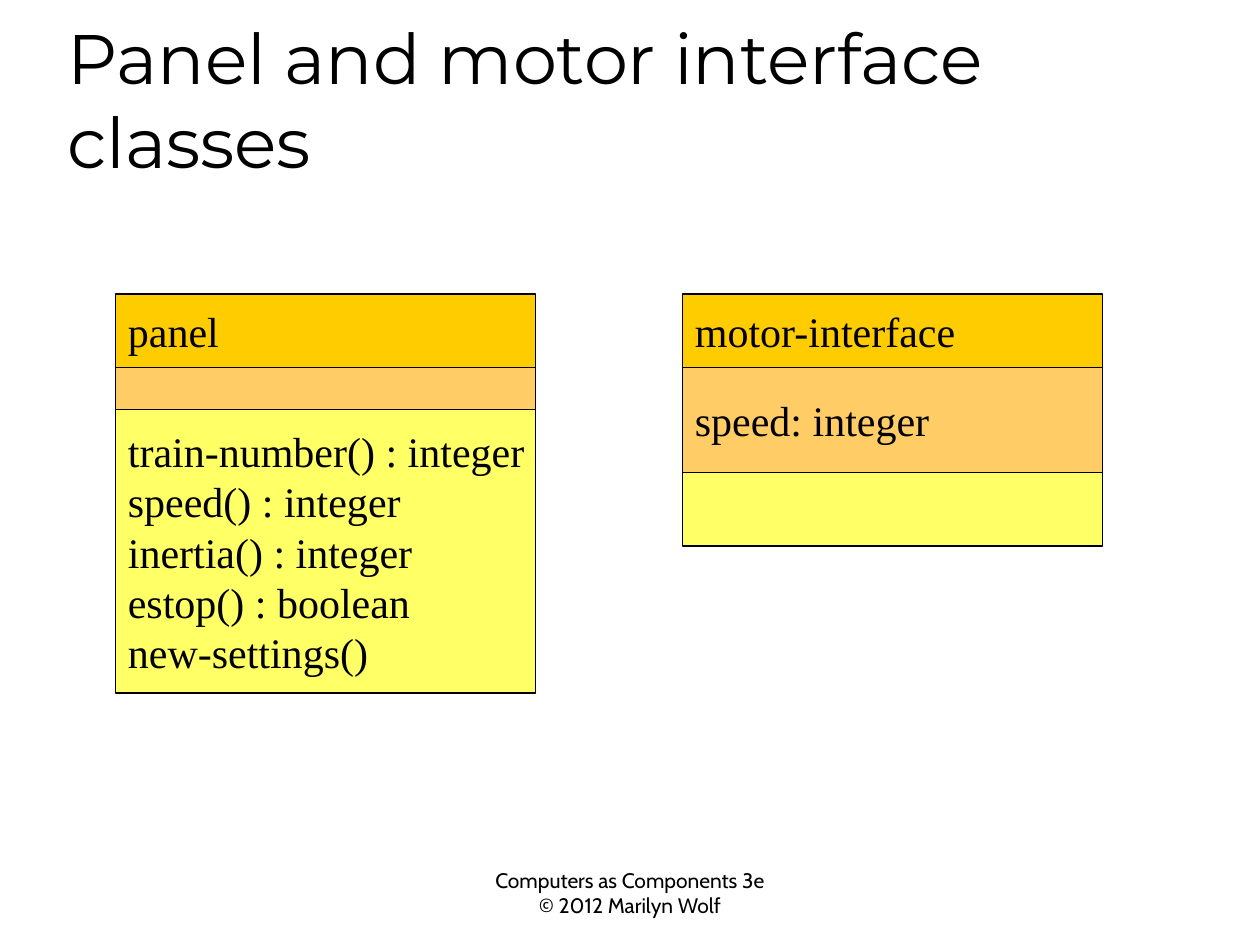
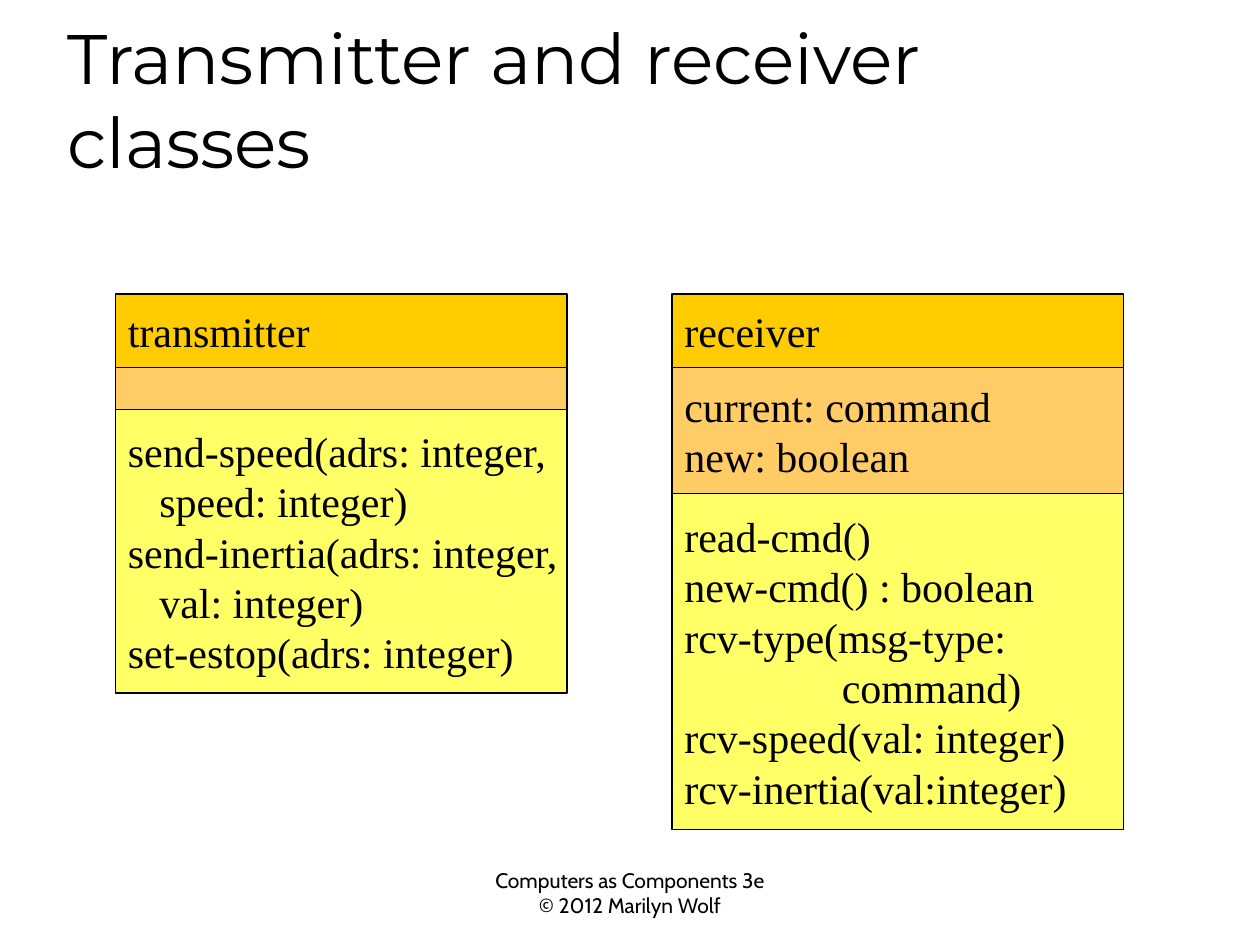
from pptx import Presentation
from pptx.dml.color import RGBColor
from pptx.enum.shapes import MSO_SHAPE
from pptx.enum.text import MSO_ANCHOR, PP_ALIGN
from pptx.util import Inches, Pt

BLACK = RGBColor(0x00, 0x00, 0x00)
NAME_FILL = RGBColor(0xFF, 0xCC, 0x00)
ATTRIBUTE_FILL = RGBColor(0xFF, 0xCC, 0x66)
OPERATION_FILL = RGBColor(0xFF, 0xFF, 0x66)
FILLS = (NAME_FILL, ATTRIBUTE_FILL, OPERATION_FILL)

UNIT = Inches(1) // 12  # one grid column or row
SLIDE_COLUMNS, SLIDE_ROWS = 120, 90
CLASS_TOP, NAME_ROWS = 28, 7

TITLE_FONT = {"name": "Montserrat", "size": Pt(40)}
CLASS_FONT = {"name": "Times New Roman", "size": Pt(24)}
FOOTER_FONT = {"name": "Cabin", "size": Pt(12)}
FOOTER_LINES = ("Computers as Components 3e", "© 2012 Marilyn Wolf")

# Each class: left column, then (rows, lines) of attributes and of operations.
# A line is a text, or a pair of text and indent in columns.
SLIDES = (
    {
        "title": "Panel and motor interface classes",
        "columns": 40,
        "classes": (
            ("panel", 11, (4, ()), (27, (
                "train-number() : integer",
                "speed() : integer",
                "inertia() : integer",
                "estop() : boolean",
                "new-settings()",
            ))),
            ("motor-interface", 65, (10, ("speed: integer",)), (7, ())),
        ),
    },
    {
        "title": "Transmitter and receiver classes",
        "columns": 43,
        "classes": (
            ("transmitter", 11, (4, ()), (27, (
                "send-speed(adrs: integer,",
                ("speed: integer)", 3),
                "send-inertia(adrs: integer,",
                ("val: integer)", 3),
                "set-estop(adrs: integer)",
            ))),
            ("receiver", 64, (12, ("current: command", "new: boolean")), (32, (
                "read-cmd()",
                "new-cmd() : boolean",
                "rcv-type(msg-type:",
                ("command)", 15),
                "rcv-speed(val: integer)",
                "rcv-inertia(val:integer)",
            ))),
        ),
    },
)


def grid(*cells):
    return [round(cell * UNIT) for cell in cells]


def write_lines(frame, lines, font_format, align=PP_ALIGN.LEFT):
    for number, line in enumerate(lines):
        text, indent = (line, 0) if isinstance(line, str) else line
        para = frame.add_paragraph() if number else frame.paragraphs[0]
        para.alignment = align
        if indent:
            para._p.get_or_add_pPr().set("marL", str(indent * UNIT))
        span = para.add_run()
        span.text = text
        span.font.color.rgb = BLACK
        for key, value in font_format.items():
            setattr(span.font, key, value)


def add_text(page, box, lines, font_format, **frame_format):
    align = frame_format.pop("align", PP_ALIGN.LEFT)
    frame = page.shapes.add_textbox(*grid(*box)).text_frame
    for key, value in {"word_wrap": True, **frame_format}.items():
        setattr(frame, key, value)
    write_lines(frame, lines, font_format, align)


def add_compartment(page, box, fill, lines):
    shape = page.shapes.add_shape(MSO_SHAPE.RECTANGLE, *grid(*box))
    shape.shadow.inherit = False
    shape.fill.solid()
    shape.fill.fore_color.rgb = fill
    shape.line.color.rgb = BLACK
    shape.line.width = Pt(0.75)
    frame_format = {"word_wrap": True, "margin_right": 0,
                    "vertical_anchor": MSO_ANCHOR.MIDDLE}
    for key, value in frame_format.items():
        setattr(shape.text_frame, key, value)
    write_lines(shape.text_frame, lines, CLASS_FONT)


def add_class(page, left, top, columns, sections):
    """Stack the name, attribute and operation compartments downwards."""
    for fill, (rows, lines) in zip(FILLS, sections):
        add_compartment(page, (left, top, columns, rows), fill, lines)
        top += rows


def add_class_slide(deck, content):
    page = deck.slides.add_slide(deck.slide_layouts[6])
    footer_columns = 32
    footer_box = ((SLIDE_COLUMNS - footer_columns) / 2, SLIDE_ROWS - 8,
                  footer_columns, 6)
    add_text(page, footer_box, FOOTER_LINES, FOOTER_FONT, align=PP_ALIGN.CENTER)
    add_text(page, (5.25, 3, 102, 15), [content["title"]], TITLE_FONT,
             vertical_anchor=MSO_ANCHOR.BOTTOM)
    for name, left, attributes, operations in content["classes"]:
        sections = ((NAME_ROWS, [name]), attributes, operations)
        add_class(page, left, CLASS_TOP, content["columns"], sections)


def main():
    deck = Presentation()
    deck.slide_width, deck.slide_height = grid(SLIDE_COLUMNS, SLIDE_ROWS)
    for content in SLIDES:
        add_class_slide(deck, content)
    deck.save("out.pptx")


if __name__ == "__main__":
    main()
